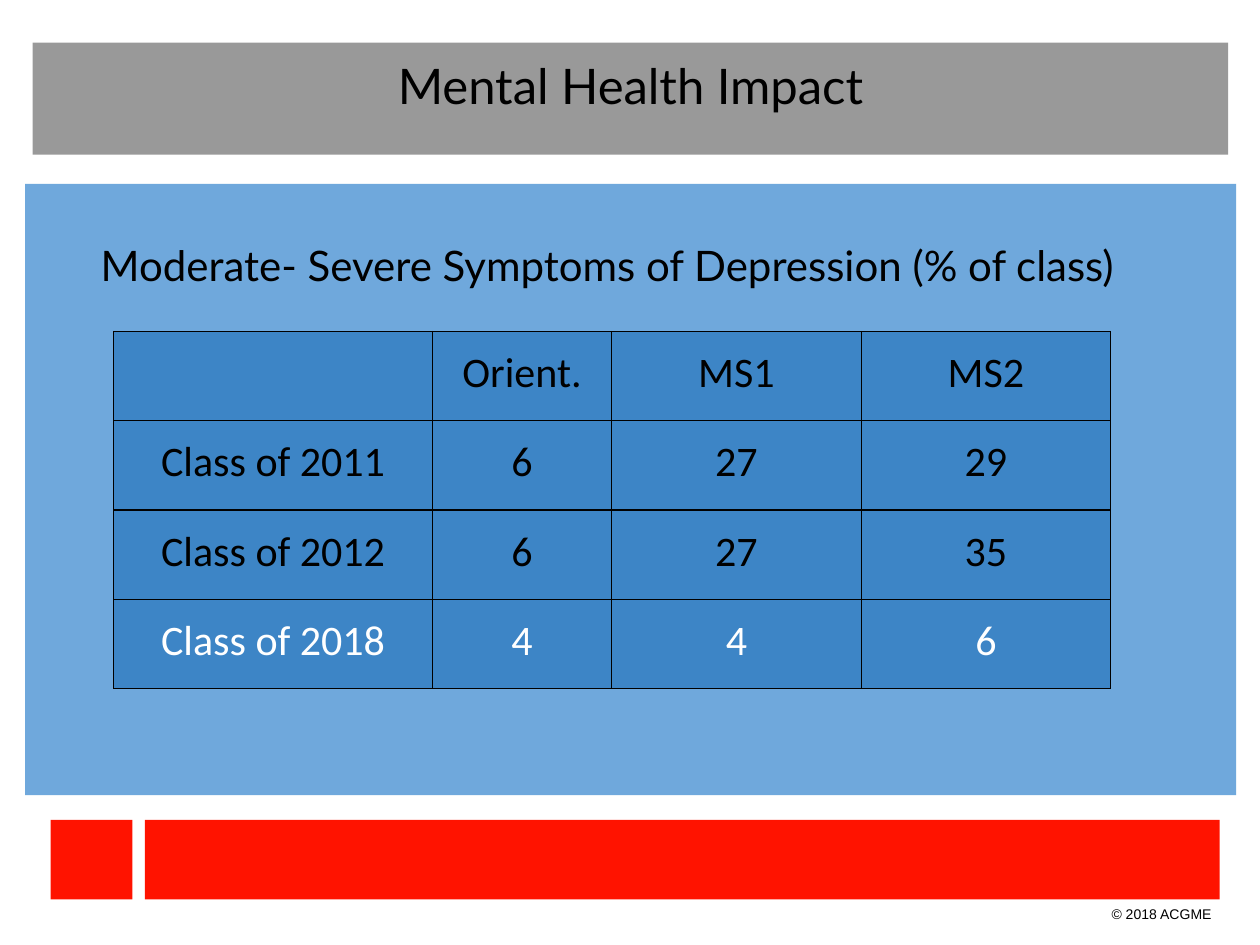
from dataclasses import dataclass

from lxml.etree import SubElement
from pptx import Presentation
from pptx.dml.color import RGBColor
from pptx.enum.shapes import MSO_SHAPE
from pptx.enum.text import MSO_ANCHOR, PP_ALIGN
from pptx.oxml.ns import qn
from pptx.util import Cm, Pt

BLACK, WHITE = "000000", "FFFFFF"
RED, GRAY, LIGHT_BLUE, BLUE = "FF1300", "999999", "6FA8DC", "3D85C6"


@dataclass
class Label:
    text: str
    size: float
    font: str
    color: str = BLACK
    align: PP_ALIGN = PP_ALIGN.CENTER


@dataclass
class Panel:
    left: float
    top: float
    width: float
    height: float
    fill: str
    label: Label | None = None
    margin_left: float = 0.25
    margin_top: float = 0.25


PANELS = [
    # Footer blocks
    Panel(2.92, 16.53, 21.67, 1.6, RED),
    Panel(1.02, 16.53, 1.65, 1.6, RED),
    # Title bar and content panel
    Panel(0.66, 0.86, 24.1, 2.26, GRAY, Label("Mental Health Impact", 28, "Lato")),
    Panel(0.51, 3.71, 24.41, 12.32, LIGHT_BLUE,
          Label("Moderate- Severe Symptoms of Depression (% of class)", 24, "Lato",
                align=PP_ALIGN.LEFT),
          margin_left=1.52, margin_top=1.12),
]

COLUMN_WIDTHS = [6.43, 3.61, 5.03, 5.03]
ROW_HEIGHT = 1.8
DEPRESSION_ROWS = [
    ("", "Orient.", "MS1", "MS2"),
    ("Class of 2011", "6", "27", "29"),
    ("Class of 2012", "6", "27", "35"),
    ("Class of 2018", "4", "4", "6"),
]


def rgb(color: str) -> RGBColor:
    return RGBColor.from_string(color)


def write_label(text_frame, label: Label) -> None:
    text_frame.text = label.text
    paragraph = text_frame.paragraphs[0]
    paragraph.alignment = label.align
    for run in paragraph.runs:
        run.font.size = Pt(label.size)
        run.font.name = label.font
        run.font.color.rgb = rgb(label.color)


def draw_panel(slide, panel: Panel) -> None:
    shape = slide.shapes.add_shape(
        MSO_SHAPE.RECTANGLE, Cm(panel.left), Cm(panel.top),
        Cm(panel.width), Cm(panel.height))
    shape.shadow.inherit = False
    shape.fill.solid()
    shape.fill.fore_color.rgb = rgb(panel.fill)
    shape.line.fill.background()
    if panel.label:
        text_frame = shape.text_frame
        text_frame.word_wrap = True
        text_frame.vertical_anchor = MSO_ANCHOR.TOP
        text_frame.margin_left = Cm(panel.margin_left)
        text_frame.margin_top = Cm(panel.margin_top)
        write_label(text_frame, panel.label)


def draw_borders(cell, color: str, width: float) -> None:
    properties = cell._tc.get_or_add_tcPr()
    for position, side in enumerate(("a:lnL", "a:lnR", "a:lnT", "a:lnB")):
        line = SubElement(properties, qn(side), w=str(Pt(width)))
        fill = SubElement(line, qn("a:solidFill"))
        SubElement(fill, qn("a:srgbClr"), val=color)
        properties.insert(position, line)  # borders come before the cell fill


def draw_table(slide, left: float, top: float) -> None:
    table = slide.shapes.add_table(
        len(DEPRESSION_ROWS), len(COLUMN_WIDTHS), Cm(left), Cm(top),
        Cm(sum(COLUMN_WIDTHS)), Cm(ROW_HEIGHT * len(DEPRESSION_ROWS))).table
    table.first_row = table.horz_banding = False
    for column, width in zip(table.columns, COLUMN_WIDTHS):
        column.width = Cm(width)
    for row, values in zip(table.rows, DEPRESSION_ROWS):
        row.height = Cm(ROW_HEIGHT)
        color = WHITE if values is DEPRESSION_ROWS[-1] else BLACK
        for cell, value in zip(row.cells, values):
            cell.fill.solid()
            cell.fill.fore_color.rgb = rgb(BLUE)
            cell.margin_left = cell.margin_right = Cm(0.25)
            cell.margin_top = cell.margin_bottom = Cm(0.33)
            write_label(cell.text_frame, Label(value, 24, "Calibri", color))
            draw_borders(cell, BLACK, 0.75)


def draw_copyright(slide) -> None:
    text_box = slide.shapes.add_textbox(Cm(22.12), Cm(18.14), Cm(2.72), Cm(0.6))
    text_box.text_frame.word_wrap = False
    text_box.text_frame.margin_right = Cm(0.41)
    write_label(text_box.text_frame,
                Label("© 2018 ACGME", 8, "Arial", align=PP_ALIGN.RIGHT))


def main() -> None:
    presentation = Presentation()
    presentation.slide_width, presentation.slide_height = Cm(25.4), Cm(19.05)
    slide = presentation.slides.add_slide(presentation.slide_layouts[6])
    for panel in PANELS:
        draw_panel(slide, panel)
    draw_table(slide, 2.29, 6.68)
    draw_copyright(slide)
    presentation.save("out.pptx")


if __name__ == "__main__":
    main()
